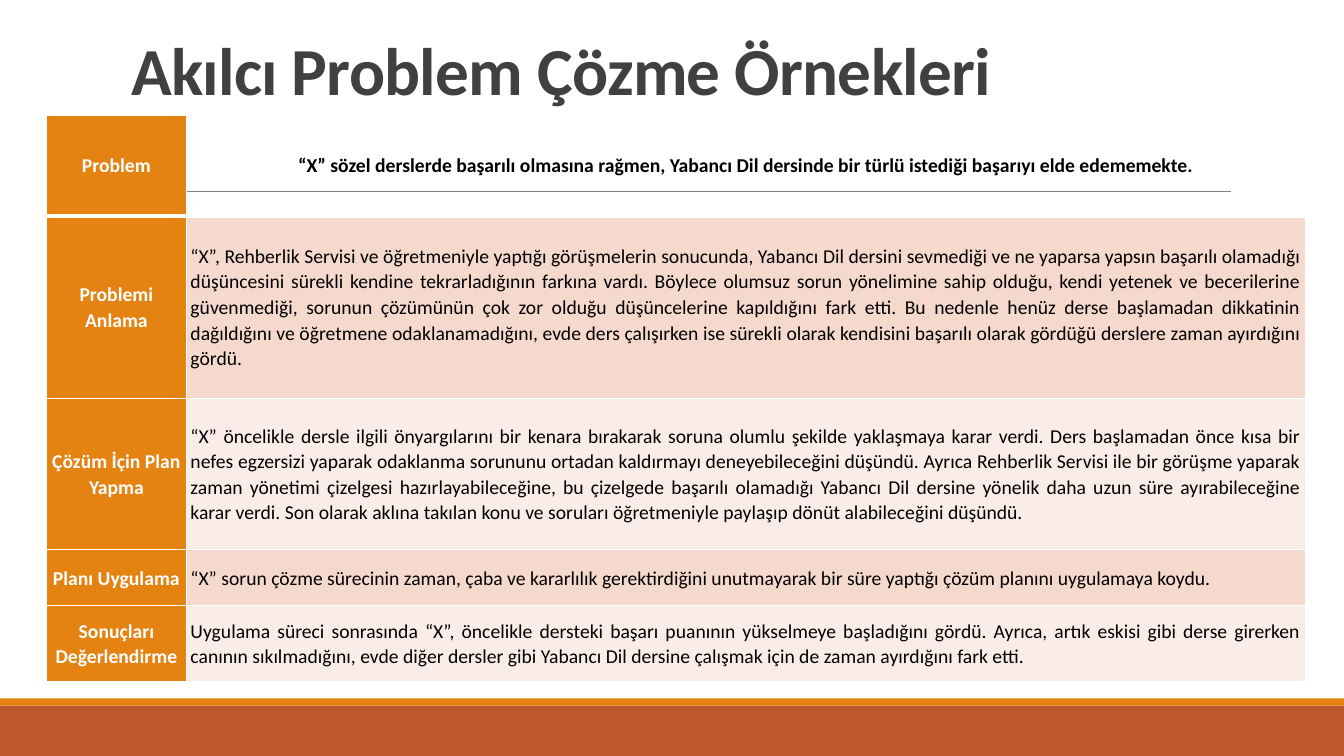
"""Build the slide with the rational problem solving table."""
from dataclasses import dataclass

import lxml.etree
import pptx
import pptx.dml.color
import pptx.enum.shapes
import pptx.enum.text
import pptx.oxml.ns
import pptx.slide
import pptx.table
import pptx.util

Inches = pptx.util.Inches
Pt = pptx.util.Pt
RGB = pptx.dml.color.RGBColor.from_string
qn = pptx.oxml.ns.qn
Align = pptx.enum.text.PP_ALIGN
Anchor = pptx.enum.text.MSO_ANCHOR


@dataclass(frozen=True)
class Theme:
    font: str = "Calibri"
    title_size: float = 48
    cell_size: float = 14
    title: str = "404040"
    text: str = "000000"
    white: str = "FFFFFF"
    rule: str = "808080"
    accent: str = "E48312"
    footer: str = "BD582C"
    bands: tuple[str, str] = ("F5D9CC", "FAEDE7")


@dataclass(frozen=True)
class Step:
    label: str
    text: str
    height: float


@dataclass(frozen=True)
class Band:
    top: float
    height: float
    color: str


THEME = Theme()
WIDTH = 13.33
COLUMNS = (1.39, 11.1)
BANDS = (Band(7, 0.5, THEME.footer), Band(6.93, 0.07, THEME.accent))
STEPS = (
    Step("Problem",
         "“X” sözel derslerde başarılı olmasına rağmen, Yabancı Dil dersinde bir türlü "
         "istediği başarıyı elde edememekte.", 1),
    Step("Problemi Anlama",
         "“X”, Rehberlik Servisi ve öğretmeniyle yaptığı görüşmelerin sonucunda, Yabancı Dil "
         "dersini sevmediği ve ne yaparsa yapsın başarılı olamadığı düşüncesini sürekli kendine "
         "tekrarladığının farkına vardı. Böylece olumsuz sorun yönelimine sahip olduğu, kendi "
         "yetenek ve becerilerine güvenmediği, sorunun çözümünün çok zor olduğu düşüncelerine "
         "kapıldığını fark etti. Bu nedenle henüz derse başlamadan dikkatinin dağıldığını ve "
         "öğretmene odaklanamadığını, evde ders çalışırken ise sürekli olarak kendisini başarılı "
         "olarak gördüğü derslere zaman ayırdığını gördü.", 1.81),
    Step("Çözüm İçin Plan Yapma",
         "“X” öncelikle dersle ilgili önyargılarını bir kenara bırakarak soruna olumlu şekilde "
         "yaklaşmaya karar verdi. Ders başlamadan önce kısa bir nefes egzersizi yaparak odaklanma "
         "sorununu ortadan kaldırmayı deneyebileceğini düşündü. Ayrıca Rehberlik Servisi ile bir "
         "görüşme yaparak zaman yönetimi çizelgesi hazırlayabileceğine, bu çizelgede başarılı "
         "olamadığı Yabancı Dil dersine yönelik daha uzun süre ayırabileceğine karar verdi. Son "
         "olarak aklına takılan konu ve soruları öğretmeniyle paylaşıp dönüt alabileceğini "
         "düşündü.", 1.5),
    Step("Planı Uygulama",
         "“X” sorun çözme sürecinin zaman, çaba ve kararlılık gerektirdiğini unutmayarak bir süre "
         "yaptığı çözüm planını uygulamaya koydu.", 0.56),
    Step("Sonuçları Değerlendirme",
         "Uygulama süreci sonrasında “X”, öncelikle dersteki başarı puanının yükselmeye "
         "başladığını gördü. Ayrıca, artık eskisi gibi derse girerken canının sıkılmadığını, evde "
         "diğer dersler gibi Yabancı Dil dersine çalışmak için de zaman ayırdığını fark etti.",
         0.75),
)


def add_band(slide: pptx.slide.Slide, band: Band) -> None:
    sp = slide.shapes.add_shape(pptx.enum.shapes.MSO_SHAPE.RECTANGLE, 0, Inches(band.top),
                                Inches(WIDTH), Inches(band.height))
    sp.shadow.inherit = False
    sp.fill.solid()
    sp.fill.fore_color.rgb = RGB(band.color)
    sp.line.fill.background()


def add_rule(slide: pptx.slide.Slide) -> None:
    line = slide.shapes.add_connector(pptx.enum.shapes.MSO_CONNECTOR.STRAIGHT,
                                      Inches(1.31), Inches(1.9), Inches(12.21), Inches(1.9))
    line.line.color.rgb = RGB(THEME.rule)
    line.line.width = Pt(0.5)
    lxml.etree.SubElement(line._element.spPr, qn("a:effectLst"))


def set_title(slide: pptx.slide.Slide, text: str) -> None:
    sp = slide.shapes.title
    sp.left, sp.top, sp.width, sp.height = Inches(1.2), Inches(0.31), Inches(11), Inches(0.82)
    tf = sp.text_frame
    tf.text = text
    tf.word_wrap = True
    tf.auto_size = pptx.enum.text.MSO_AUTO_SIZE.NONE
    tf.vertical_anchor = Anchor.BOTTOM
    p = tf.paragraphs[0]
    p.alignment = Align.LEFT
    p.line_spacing = 0.85
    p.font.name, p.font.size, p.font.bold = THEME.font, Pt(THEME.title_size), True
    p.font.color.rgb = RGB(THEME.title)
    p.runs[0]._r.get_or_add_rPr().set("spc", "-50")


def set_borders(cell: pptx.table._Cell, top: float, bottom: float) -> None:
    tc_pr = cell._tc.get_or_add_tcPr()
    widths = {"a:lnL": 1, "a:lnR": 1, "a:lnT": top, "a:lnB": bottom}
    for i, (tag, width) in enumerate(widths.items()):
        ln = lxml.etree.Element(qn(tag), w=str(Pt(width)))
        fill = lxml.etree.SubElement(ln, qn("a:solidFill"))
        lxml.etree.SubElement(fill, qn("a:srgbClr"), val=THEME.white)
        tc_pr.insert(i, ln)


def fill_cell(cell: pptx.table._Cell, text: str, color: str, fill: str | None,
              bold: bool, align: Align) -> None:
    cell.margin_left = cell.margin_right = Inches(0.04)
    cell.margin_top = cell.margin_bottom = 0
    cell.vertical_anchor = Anchor.MIDDLE
    if fill:
        cell.fill.solid()
        cell.fill.fore_color.rgb = RGB(fill)
    else:
        cell.fill.background()
    cell.text = text
    p = cell.text_frame.paragraphs[0]
    p.alignment = align
    p.line_spacing = 1.07
    p.font.name, p.font.size, p.font.bold = THEME.font, Pt(THEME.cell_size), bold
    p.font.color.rgb = RGB(color)


def add_steps(slide: pptx.slide.Slide, steps: tuple[Step, ...]) -> None:
    frame = slide.shapes.add_table(len(steps), len(COLUMNS), Inches(0.46), Inches(1.14),
                                   Inches(sum(COLUMNS)), Inches(sum(s.height for s in steps)))
    table = frame.table
    table.first_row = table.horz_banding = False
    for column, width in zip(table.columns, COLUMNS):
        column.width = Inches(width)
    for i, step in enumerate(steps):
        table.rows[i].height = Inches(step.height)
        header = i == 0
        label, body = table.cell(i, 0), table.cell(i, 1)
        fill_cell(label, step.label, THEME.white, THEME.accent, True, Align.CENTER)
        fill_cell(body, step.text, THEME.text, None if header else THEME.bands[(i - 1) % 2],
                  header, Align.CENTER if header else Align.JUSTIFY)
        for cell in (label, body):
            set_borders(cell, top=3 if i == 1 else 1, bottom=3 if header else 1)


def main() -> None:
    prs = pptx.Presentation()
    prs.slide_width, prs.slide_height = Inches(WIDTH), Inches(7.5)
    slide = prs.slides.add_slide(prs.slide_layouts.get_by_name("Title Only"))
    for band in BANDS:
        add_band(slide, band)
    add_rule(slide)
    set_title(slide, "Akılcı Problem Çözme Örnekleri")
    add_steps(slide, STEPS)
    prs.save("out.pptx")


if __name__ == "__main__":
    main()
